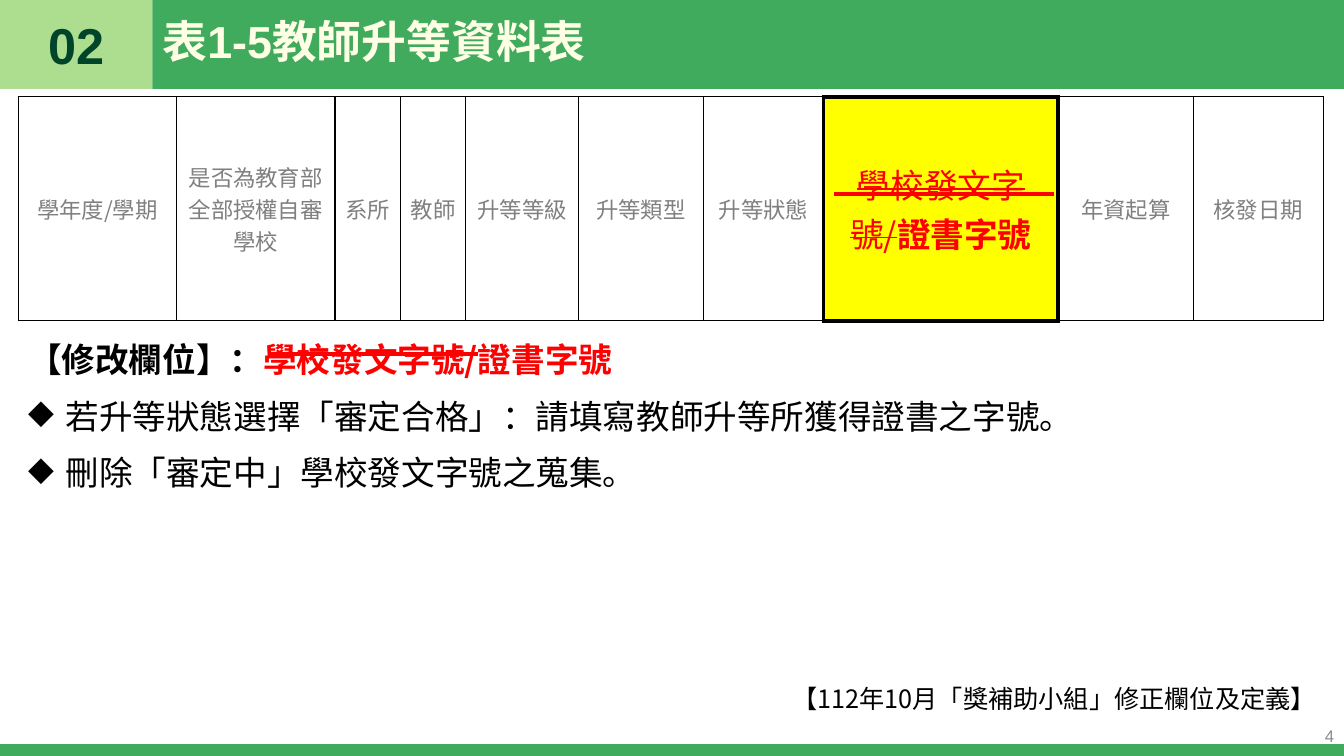
import pptx
import pptx.util
import pptx.dml.color
import pptx.enum.shapes
import pptx.enum.text
import pptx.oxml
import pptx.oxml.ns
from pptx.util import Cm, Pt

# Content
COLORS = {"green": "41AB5D", "light": "ADDD8E", "dark": "004529", "cream": "FFFFE5",
          "gray": "808080", "pale": "8C8C8C", "red": "FF0000", "black": "000000",
          "yellow": "FFFF00", "white": "FFFFFF"}
LATIN, CJK = "Arial", "Noto Sans CJK SC"

TITLE = "表1-5教師升等資料表"
SECTION = "02"
PAGE = "4"
CHANGED = 7
COLUMNS = [  # text, width in cm
    ("學年度/學期", 3.99), ("是否為教育部全部授權自審學校", 3.99), ("系所", 1.65),
    ("教師", 1.65), ("升等等級", 2.84), ("升等類型", 3.15), ("升等狀態", 3.02),
    (("學校發文字號/", "證書字號"), 5.92), ("年資起算", 3.4), ("核發日期", 3.28),
]
HEADING = ("【修改欄位】：", "學校發文字號/證書字號")
POINTS = ["若升等狀態選擇「審定合格」：請填寫教師升等所獲得證書之字號。",
          "刪除「審定中」學校發文字號之蒐集。"]
FOOTNOTE = "【112年10月「獎補助小組」修正欄位及定義】"
STRIKES = [(21.03, 26.57, 4.88), (6.78, 12.04, 8.92)]  # left, right, height in cm

# Layout in cm
WIDTH, HEIGHT = 33.87, 19.05
HEADER, SECTION_WIDTH, FOOTER = 2.24, 3.84, 0.3
MARGIN, TABLE_TOP, TABLE_HEIGHT = 0.46, 2.44, 5.64
BODY_WIDTH = WIDTH - 2 * MARGIN
INDENT = 0.94

ALIGN = pptx.enum.text.PP_ALIGN
MIDDLE = pptx.enum.text.MSO_ANCHOR.MIDDLE


def rgb(name):
    return pptx.dml.color.RGBColor.from_string(COLORS[name])


def add_run(paragraph, text, size, color, font=CJK, bold=False, strike=False):
    run = paragraph.add_run()
    run.text = text
    for name, value in {"size": Pt(size), "bold": bold, "name": font}.items():
        setattr(run.font, name, value)
    run.font.color.rgb = rgb(color)
    properties = run._r.get_or_add_rPr()
    if strike:
        properties.set("strike", "sngStrike")
    east_asian = pptx.oxml.parse_xml(
        f'<a:ea {pptx.oxml.ns.nsdecls("a")} typeface="{CJK}"/>')
    properties.find(pptx.oxml.ns.qn("a:latin")).addnext(east_asian)


def format_paragraph(paragraph, **values):
    for name, value in values.items():
        setattr(paragraph, name, value)
    return paragraph


def add_box(slide, left, top, width, height, anchor=MIDDLE):
    box = slide.shapes.add_textbox(Cm(left), Cm(top), Cm(width), Cm(height))
    box.text_frame.word_wrap = True
    box.text_frame.vertical_anchor = anchor
    return box.text_frame


def add_band(slide, left, top, width, height, color):
    band = slide.shapes.add_shape(pptx.enum.shapes.MSO_SHAPE.RECTANGLE,
                                  Cm(left), Cm(top), Cm(width), Cm(height))
    band.shadow.inherit = False
    band.fill.solid()
    band.fill.fore_color.rgb = rgb(color)
    band.line.fill.background()
    return band


def set_borders(cell, widths):
    properties = cell._tc.get_or_add_tcPr()
    for position, (side, width) in enumerate(widths.items()):
        properties.insert(position, pptx.oxml.parse_xml(
            f'<a:ln{side} {pptx.oxml.ns.nsdecls("a")} w="{Pt(width)}"><a:solidFill>'
            f'<a:srgbClr val="{COLORS["black"]}"/></a:solidFill></a:ln{side}>'))


def add_header(slide):
    add_band(slide, 0, HEIGHT - FOOTER, WIDTH, FOOTER, "green")
    section = add_band(slide, 0, 0, SECTION_WIDTH, HEADER, "light")
    add_band(slide, SECTION_WIDTH, 0, WIDTH - SECTION_WIDTH, HEADER, "green")
    section.text_frame.vertical_anchor = MIDDLE
    paragraph = format_paragraph(section.text_frame.paragraphs[0],
                                 alignment=ALIGN.CENTER, space_before=Pt(10))
    add_run(paragraph, SECTION, 36, "dark", LATIN, bold=True)

    title = slide.shapes.title
    slide.shapes._spTree.append(title._element)  # in front of the bands
    box = {"left": SECTION_WIDTH, "top": 0, "width": 29.51, "height": HEADER}
    for name, value in box.items():
        setattr(title, name, Cm(value))
    title.text_frame.auto_size = pptx.enum.text.MSO_AUTO_SIZE.NONE
    title.text_frame.vertical_anchor = MIDDLE
    paragraph = format_paragraph(title.text_frame.paragraphs[0],
                                 alignment=ALIGN.LEFT, line_spacing=0.9)
    add_run(paragraph, TITLE, 32, "cream", LATIN, bold=True)


def add_columns(slide):
    table = slide.shapes.add_table(1, len(COLUMNS), Cm(MARGIN), Cm(TABLE_TOP),
                                   Cm(BODY_WIDTH), Cm(TABLE_HEIGHT)).table
    table.first_row = table.horz_banding = False
    cell_format = {"vertical_anchor": MIDDLE, "margin_left": Cm(0.18),
                   "margin_right": Cm(0.18), "margin_top": 0, "margin_bottom": 0}
    for index, (text, width) in enumerate(COLUMNS):
        table.columns[index].width = Cm(width)
        cell = table.cell(0, index)
        for name, value in cell_format.items():
            setattr(cell, name, value)
        changed = index == CHANGED
        cell.fill.solid()
        cell.fill.fore_color.rgb = rgb("yellow" if changed else "white")
        set_borders(cell, {"L": 3 if index in (CHANGED, CHANGED + 1) else 1,
                           "R": 3 if index in (CHANGED - 1, CHANGED) else 1,
                           "T": 3 if changed else 1, "B": 3 if changed else 1})
        paragraph = format_paragraph(cell.text_frame.paragraphs[0],
                                     alignment=ALIGN.CENTER)
        if changed:
            removed, kept = text
            add_run(paragraph, removed, 24, "red", strike=True)
            add_run(paragraph, kept, 24, "red", bold=True)
        else:
            add_run(paragraph, text, 16, "gray")


def add_notes_text(slide):
    frame = add_box(slide, MARGIN, 8.31, BODY_WIDTH, 4.6, pptx.enum.text.MSO_ANCHOR.TOP)
    heading = format_paragraph(frame.paragraphs[0], line_spacing=1.1, space_before=Pt(6))
    for text, color in zip(HEADING, ("black", "red")):
        add_run(heading, text, 24, color, bold=True)
    for point in POINTS:
        paragraph = format_paragraph(frame.add_paragraph(), line_spacing=1.2,
                                     space_before=Pt(6))
        properties = paragraph._p.get_or_add_pPr()
        properties.set("marL", str(Cm(INDENT)))
        properties.set("indent", str(-Cm(INDENT)))
        properties.append(pptx.oxml.parse_xml(
            f'<a:buChar {pptx.oxml.ns.nsdecls("a")} char="◆"/>'))
        add_run(paragraph, point, 24, "black")

    footnote = add_box(slide, MARGIN, 16.95, BODY_WIDTH, 1.2).paragraphs[0]
    format_paragraph(footnote, alignment=ALIGN.RIGHT, line_spacing=1.1)
    add_run(footnote, FOOTNOTE, 18, "black")

    page = add_box(slide, WIDTH - 7.62, 18.03, 7.62, 1.02).paragraphs[0]
    format_paragraph(page, alignment=ALIGN.RIGHT)
    add_run(page, PAGE, 12, "pale", LATIN)


def add_strikes(slide):
    for left, right, height in STRIKES:
        line = slide.shapes.add_connector(pptx.enum.shapes.MSO_CONNECTOR.STRAIGHT,
                                          Cm(left), Cm(height), Cm(right), Cm(height))
        line.line.color.rgb = rgb("red")
        line.line.width = Pt(3)
        line._element.spPr.append(pptx.oxml.parse_xml(
            f'<a:effectLst {pptx.oxml.ns.nsdecls("a")}/>'))


def main():
    presentation = pptx.Presentation()
    presentation.slide_width, presentation.slide_height = Cm(WIDTH), Cm(HEIGHT)
    slide = presentation.slides.add_slide(presentation.slide_layouts[5])
    add_header(slide)
    add_columns(slide)
    add_notes_text(slide)
    add_strikes(slide)
    presentation.save("out.pptx")


if __name__ == "__main__":
    main()
